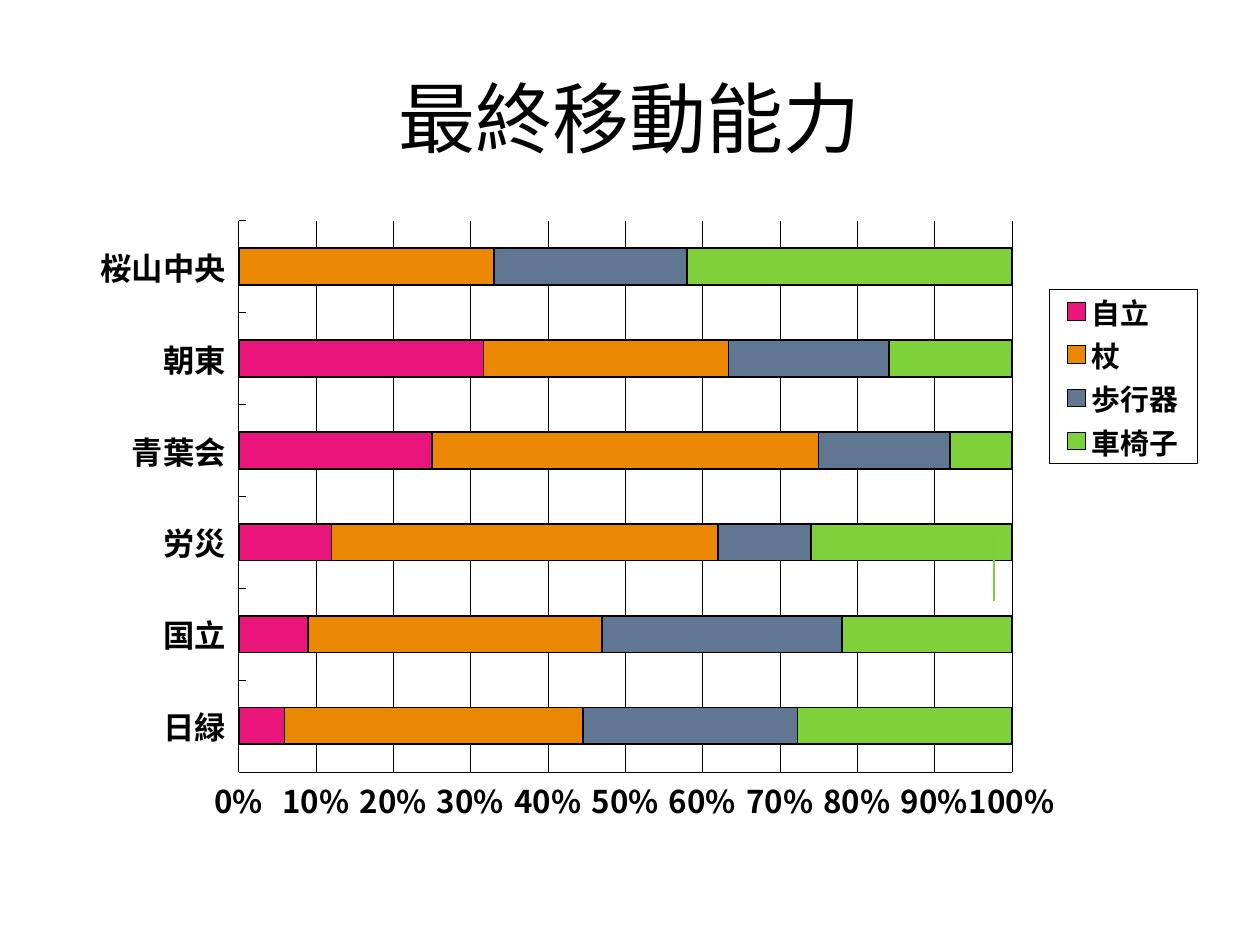
import pptx
import pptx.chart.data
import pptx.dml.color
import pptx.enum.chart
import pptx.enum.shapes
import pptx.enum.text
import pptx.oxml
import pptx.oxml.ns
import pptx.util

Inches, Pt = pptx.util.Inches, pptx.util.Pt
COLORS = {"text": "000000", "independent": "EA157A", "cane": "EB8803",
          "walker": "5F7791", "wheelchair": "7FD13B", "mark": "7CD036"}
TITLE_FONT, CHART_FONT = "Calibri", "Noto Sans CJK JP"

HOSPITALS = ["日緑", "国立", "労災", "青葉会", "朝東", "桜山中央"]
ABILITIES = [
    ("自立", "independent", (6, 9, 12, 25, 32, None)),
    ("杖", "cane", (39, 38, 50, 50, 32, 33)),
    ("歩行器", "walker", (28, 31, 12, 17, 21, 25)),
    ("車椅子", "wheelchair", (28, 22, 26, 8, 16, 42)),
]


def rgb(name):
    return pptx.dml.color.RGBColor.from_string(COLORS[name])


def set_line(line, color, width):
    line.color.rgb = rgb(color)
    line.width = Pt(width)


def set_font(font, name, size, bold=False):
    font.name, font.size, font.bold = name, Pt(size), bold
    font.color.rgb = rgb("text")


def make_layout(x, y, w, h, inner=False):
    """Return a c:layout element with fractions of the chart's box."""
    target = '<c:layoutTarget val="inner"/>' if inner else ""
    return pptx.oxml.parse_xml(
        f'<c:layout {pptx.oxml.ns.nsdecls("c")}><c:manualLayout>{target}'
        '<c:xMode val="edge"/><c:yMode val="edge"/>'
        f'<c:x val="{x}"/><c:y val="{y}"/><c:w val="{w}"/><c:h val="{h}"/>'
        '</c:manualLayout></c:layout>')


def add_title(slide, x, y, w, h):
    tf = slide.shapes.add_textbox(x, y, w, h).text_frame
    tf.word_wrap = True
    tf.vertical_anchor = pptx.enum.text.MSO_ANCHOR.MIDDLE
    p = tf.paragraphs[0]
    p.text = "最終移動能力"
    p.alignment = pptx.enum.text.PP_ALIGN.CENTER
    set_font(p.font, TITLE_FONT, 44)


def style_axes(chart):
    cat, val = chart.category_axis, chart.value_axis
    for axis in (cat, val):
        axis.major_tick_mark = pptx.enum.chart.XL_TICK_MARK.INSIDE
        axis.minor_tick_mark = pptx.enum.chart.XL_TICK_MARK.NONE
        set_font(axis.tick_labels.font, CHART_FONT, 17.9, True)
        set_line(axis.format.line, "text", 0.25)
    cat.tick_label_position = pptx.enum.chart.XL_TICK_LABEL_POSITION.LOW
    val.major_unit = 0.1
    val.tick_labels.number_format = "0%"
    val.tick_labels.number_format_is_linked = False
    val.has_major_gridlines = True
    set_line(val.major_gridlines.format.line, "text", 0.25)


def add_legend(chart):
    chart.has_legend = True
    legend = chart.legend
    legend.position = pptx.enum.chart.XL_LEGEND_POSITION.RIGHT
    legend.include_in_layout = False
    set_font(legend.font, CHART_FONT, 16.5, True)
    element = legend._element
    for old in element.findall(pptx.oxml.ns.qn("c:layout")):
        element.remove(old)
    element.find(pptx.oxml.ns.qn("c:legendPos")).addnext(
        make_layout(0.87, 0.11, 0.13, 0.28))
    element.find(pptx.oxml.ns.qn("c:txPr")).addprevious(pptx.oxml.parse_xml(
        f'<c:spPr {pptx.oxml.ns.nsdecls("c", "a")}><a:noFill/><a:ln w="3175">'
        f'<a:solidFill><a:srgbClr val="{COLORS["text"]}"/></a:solidFill>'
        '</a:ln></c:spPr>'))


def add_ability_chart(slide, x, y, w, h):
    data = pptx.chart.data.CategoryChartData()
    data.categories = HOSPITALS
    for name, _, values in ABILITIES:
        data.add_series(name, values)
    chart = slide.shapes.add_chart(
        pptx.enum.chart.XL_CHART_TYPE.BAR_STACKED_100, x, y, w, h, data).chart
    chart.has_title = False
    set_font(chart.font, CHART_FONT, 17.9, True)
    plot = chart.plots[0]
    plot.gap_width, plot.overlap = 150, 100
    plot.vary_by_categories = False
    for series, (_, color, _) in zip(plot.series, ABILITIES):
        series.format.fill.solid()
        series.format.fill.fore_color.rgb = rgb(color)
        set_line(series.format.line, "text", 1)
    style_axes(chart)
    add_legend(chart)
    area = chart._chartSpace.chart.plotArea
    for old in area.findall(pptx.oxml.ns.qn("c:layout")):
        area.remove(old)
    area.insert(0, make_layout(0.155, 0, 0.682, 0.886, inner=True))


def add_mark(slide, x, top, bottom):
    line = slide.shapes.add_connector(
        pptx.enum.shapes.MSO_CONNECTOR.STRAIGHT, x, top, x, bottom)
    set_line(line.line, "mark", 0.75)
    line._element.spPr.append(pptx.oxml.parse_xml(
        f'<a:effectLst {pptx.oxml.ns.nsdecls("a")}/>'))


def main():
    prs = pptx.Presentation()
    prs.slide_width, prs.slide_height = Inches(10), Inches(7.5)
    slide = prs.slides.add_slide(prs.slide_layouts[6])
    add_title(slide, Inches(0.5), Inches(0.3), Inches(9), Inches(1.25))
    add_ability_chart(slide, Inches(0.5), Inches(1.75), Inches(9), Inches(4.94))
    add_mark(slide, Inches(7.89), Inches(4.22), Inches(4.77))
    prs.save("out.pptx")


if __name__ == "__main__":
    main()
